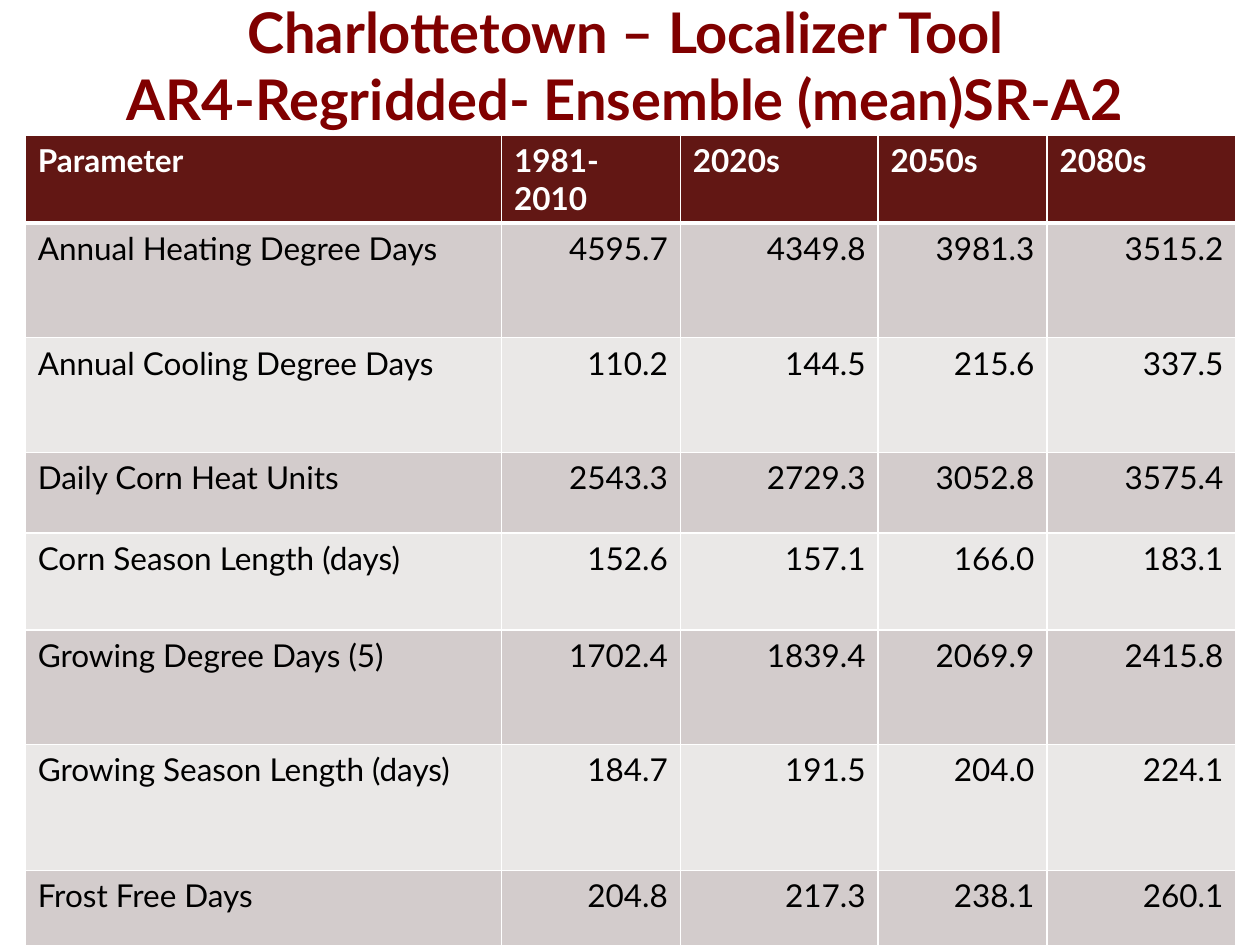
from copy import deepcopy
from dataclasses import dataclass

from lxml.etree import SubElement
from pptx import Presentation
from pptx.dml.color import RGBColor
from pptx.enum.text import MSO_ANCHOR, MSO_AUTO_SIZE, PP_ALIGN
from pptx.oxml.ns import qn
from pptx.util import Inches, Pt


@dataclass(frozen=True)
class Theme:
    font: str = "Lato"
    title_color: str = "800000"
    header_fill: str = "621714"
    band_fills: tuple = ("D3CCCC", "EAE8E7")
    header_text: str = "FFFFFF"
    body_text: str = "000000"
    border: str = "FFFFFF"
    title_size: int = 32
    table_size: int = 18
    border_width: int = 1
    header_rule_width: int = 3


THEME = Theme()

TITLE = "Charlottetown – Localizer Tool\nAR4-Regridded- Ensemble (mean)SR-A2"
TITLE_BOX = (0.63, -0.11, 8.67, 1.25)
TABLE_BOX = (0.2, 1.07, 9.61, 6.18)
COLUMN_WIDTHS = (3.78, 1.42, 1.57, 1.34, 1.5)
ROW_HEIGHTS = (0.36, 0.91, 0.91, 0.64, 0.77, 0.91, 1, 0.64)
CLIMATE_ROWS = (
    ("Parameter", "1981-2010", "2020s", "2050s", "2080s"),
    ("Annual Heating Degree Days", "4595.7", "4349.8", "3981.3", "3515.2"),
    ("Annual Cooling Degree Days", "110.2", "144.5", "215.6", "337.5"),
    ("Daily Corn Heat Units", "2543.3", "2729.3", "3052.8", "3575.4"),
    ("Corn Season Length (days)", "152.6", "157.1", "166.0", "183.1"),
    ("Growing Degree Days (5)", "1702.4", "1839.4", "2069.9", "2415.8"),
    ("Growing Season Length (days)", "184.7", "191.5", "204.0", "224.1"),
    ("Frost Free Days", "204.8", "217.3", "238.1", "260.1"),
)


def write_text(text_frame, text, *, size, color, bold=False, align=PP_ALIGN.LEFT):
    paragraph = text_frame.paragraphs[0]
    paragraph.text = text
    paragraph.alignment = align
    for run in paragraph.runs:
        run.font.name = THEME.font
        run.font.size = Pt(size)
        run.font.bold = bold
        run.font.color.rgb = RGBColor.from_string(color)
    for line_break in paragraph._p.findall(qn("a:br")):
        line_break.append(deepcopy(paragraph.runs[0]._r.rPr))


def set_borders(cell, top_width, bottom_width):
    properties = cell._tc.get_or_add_tcPr()
    widths = {"L": THEME.border_width, "R": THEME.border_width,
              "T": top_width, "B": bottom_width}
    for side, width in widths.items():
        line = SubElement(properties, qn(f"a:ln{side}"), w=str(Pt(width)))
        fill = SubElement(line, qn("a:solidFill"))
        SubElement(fill, qn("a:srgbClr"), val=THEME.border)


def place_title(slide, box):
    title = slide.shapes.title
    title.left, title.top, title.width, title.height = map(Inches, box)
    text_frame = title.text_frame
    text_frame.word_wrap = True
    text_frame.auto_size = MSO_AUTO_SIZE.NONE
    text_frame.vertical_anchor = MSO_ANCHOR.MIDDLE
    write_text(text_frame, TITLE, size=THEME.title_size,
               color=THEME.title_color, bold=True, align=PP_ALIGN.CENTER)


def format_cell(cell, text, row_index, column_index):
    is_header = row_index == 0
    top_width = THEME.header_rule_width if row_index == 1 else THEME.border_width
    bottom_width = THEME.header_rule_width if is_header else THEME.border_width
    set_borders(cell, top_width, bottom_width)
    fill = THEME.header_fill if is_header else THEME.band_fills[(row_index - 1) % 2]
    cell.fill.solid()
    cell.fill.fore_color.rgb = RGBColor.from_string(fill)
    is_value = not is_header and column_index > 0
    write_text(cell.text_frame, text, size=THEME.table_size,
               color=THEME.header_text if is_header else THEME.body_text,
               bold=is_header,
               align=PP_ALIGN.RIGHT if is_value else PP_ALIGN.LEFT)


def place_climate_table(slide, box):
    frame = slide.shapes.add_table(len(CLIMATE_ROWS), len(COLUMN_WIDTHS),
                                   *map(Inches, box))
    table = frame.table
    for column, width in zip(table.columns, COLUMN_WIDTHS):
        column.width = Inches(width)
    for row, height in zip(table.rows, ROW_HEIGHTS):
        row.height = Inches(height)
    for row_index, texts in enumerate(CLIMATE_ROWS):
        for column_index, text in enumerate(texts):
            format_cell(table.cell(row_index, column_index), text,
                        row_index, column_index)


def main():
    presentation = Presentation()
    presentation.slide_width = Inches(10)
    presentation.slide_height = Inches(7.5)
    slide = presentation.slides.add_slide(
        presentation.slide_layouts.get_by_name("Title Only"))
    place_title(slide, TITLE_BOX)
    place_climate_table(slide, TABLE_BOX)
    presentation.save("out.pptx")


if __name__ == "__main__":
    main()
